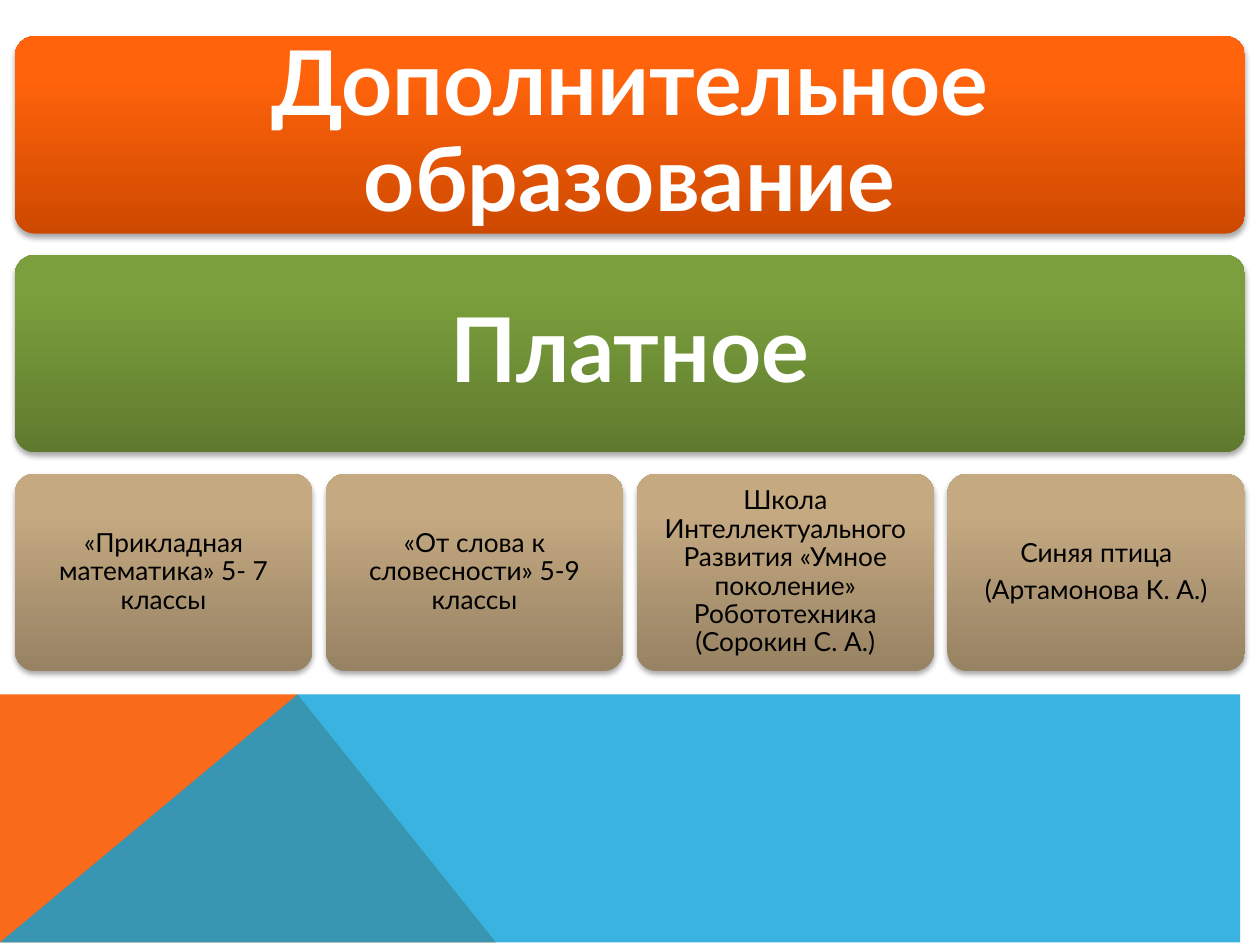
from copy import deepcopy

from lxml import etree
from pptx import Presentation
from pptx.dml.color import RGBColor
from pptx.enum.shapes import MSO_SHAPE
from pptx.enum.text import MSO_ANCHOR, PP_ALIGN
from pptx.oxml.ns import qn
from pptx.util import Cm, Pt

SLIDE_W, SLIDE_H = 25.4, 19.05
FONT = "Lato"
COLORS = {"orange": "F96A1B", "blue": "08A1D9", "white": "FFFFFF",
          "black": "000000", "shadow": "000000"}
# Gradient stops from the bottom edge to the top edge
GRADIENTS = {"orange": ("CE4900", "FF630C", "FF640E"),
             "green": ("5F7A2E", "7B9F3C", "7CA13B"),
             "tan": ("978263", "C4A981", "C6AA80")}
STOP_POSITIONS = (0, 0.8, 1)

BANNERS = [("Дополнительное образование", "orange"), ("Платное", "green")]
COURSES = [
    ["«Прикладная математика» 5- 7 классы"],
    ["«От слова к словесности» 5-9 классы"],
    ["Школа Интеллектуального Развития «Умное поколение» "
     "Робототехника (Сорокин С. А.)"],
    ["Синяя птица", "(Артамонова К. А.)"],
]


def rgb(name):
    return RGBColor.from_string(COLORS[name])


def add_polygon(slide, points, color, opacity=None):
    builder = slide.shapes.build_freeform(*points[0], scale=Cm(1))
    builder.add_line_segments(points[1:], close=True)
    polygon = builder.convert_to_shape()
    polygon.fill.solid()
    polygon.fill.fore_color.rgb = rgb(color)
    polygon.line.fill.background()
    polygon.shadow.inherit = False
    if opacity is not None:
        color_element = polygon._element.spPr.find(".//" + qn("a:srgbClr"))
        etree.SubElement(color_element, qn("a:alpha"), val=str(opacity * 1000))


def add_footer(slide, left, top, width, height):
    """Orange corner under a translucent blue field."""
    right, bottom = left + width, top + height
    peak = (left + 5.67, top)
    add_polygon(slide, [(left, bottom), (left, top), peak,
                        (left + 9.93, bottom)], "orange")
    add_polygon(slide, [(left, bottom), peak, (right, top),
                        (right, bottom)], "blue", opacity=80)


def apply_gradient(shape, gradient):
    shape.fill.gradient()
    shape.fill.gradient_angle = 90
    stop_list = shape._element.spPr.find(".//" + qn("a:gsLst"))
    stop_list.append(deepcopy(stop_list[-1]))
    for stop, position, color in zip(shape.fill.gradient_stops,
                                     STOP_POSITIONS, GRADIENTS[gradient]):
        stop.position = position
        stop.color.rgb = RGBColor.from_string(color)


def apply_shadow(shape):
    shape.shadow.inherit = False
    effects = shape._element.spPr.find(qn("a:effectLst"))
    shadow = etree.SubElement(effects, qn("a:outerShdw"), blurRad="40000",
                              dist="23000", dir="5400000", rotWithShape="0")
    color = etree.SubElement(shadow, qn("a:srgbClr"), val=COLORS["shadow"])
    etree.SubElement(color, qn("a:alpha"), val="35000")


def add_panel(slide, left, top, width, height, lines, gradient,
              size, color, inset, bold=False):
    panel = slide.shapes.add_shape(MSO_SHAPE.ROUNDED_RECTANGLE, Cm(left),
                                   Cm(top), Cm(width), Cm(height))
    panel.adjustments[0] = 0.1
    panel.line.fill.background()
    apply_gradient(panel, gradient)
    apply_shadow(panel)

    frame = panel.text_frame
    frame.text = "\n".join(lines)
    frame.word_wrap = True
    frame.vertical_anchor = MSO_ANCHOR.MIDDLE
    frame.margin_left = frame.margin_right = Cm(inset)
    frame.margin_top = frame.margin_bottom = Cm(inset)
    for paragraph in frame.paragraphs:
        paragraph.alignment = PP_ALIGN.CENTER
        paragraph.line_spacing = 0.9
        paragraph.space_after = Pt(0.35 * size)
        for run in paragraph.runs:
            run.font.name = FONT
            run.font.size = Pt(size)
            run.font.bold = bold
            run.font.color.rgb = rgb(color)


def add_hierarchy(slide, left, top, width, row_height, row_pitch):
    """Two full-width banners above a row of equal course cards."""
    for row, (title, gradient) in enumerate(BANNERS):
        add_panel(slide, left, top + row * row_pitch, width, row_height,
                  [title], gradient, 51, "white", 0.53, bold=True)

    card_width = 6
    card_pitch = (width - card_width) / (len(COURSES) - 1)
    cards_top = top + len(BANNERS) * row_pitch
    for column, lines in enumerate(COURSES):
        add_panel(slide, left + column * card_pitch, cards_top, card_width,
                  row_height, lines, "tan", 15, "black", 0.15)


def main():
    presentation = Presentation()
    presentation.slide_width = Cm(SLIDE_W)
    presentation.slide_height = Cm(SLIDE_H)
    slide = presentation.slides.add_slide(presentation.slide_layouts[6])
    footer_top = 14.03
    add_footer(slide, 0, footer_top, SLIDE_W, SLIDE_H - footer_top)
    add_hierarchy(slide, 0.3, 0.73, SLIDE_W - 0.6, 3.98, 4.41)
    presentation.save("out.pptx")


if __name__ == "__main__":
    main()
